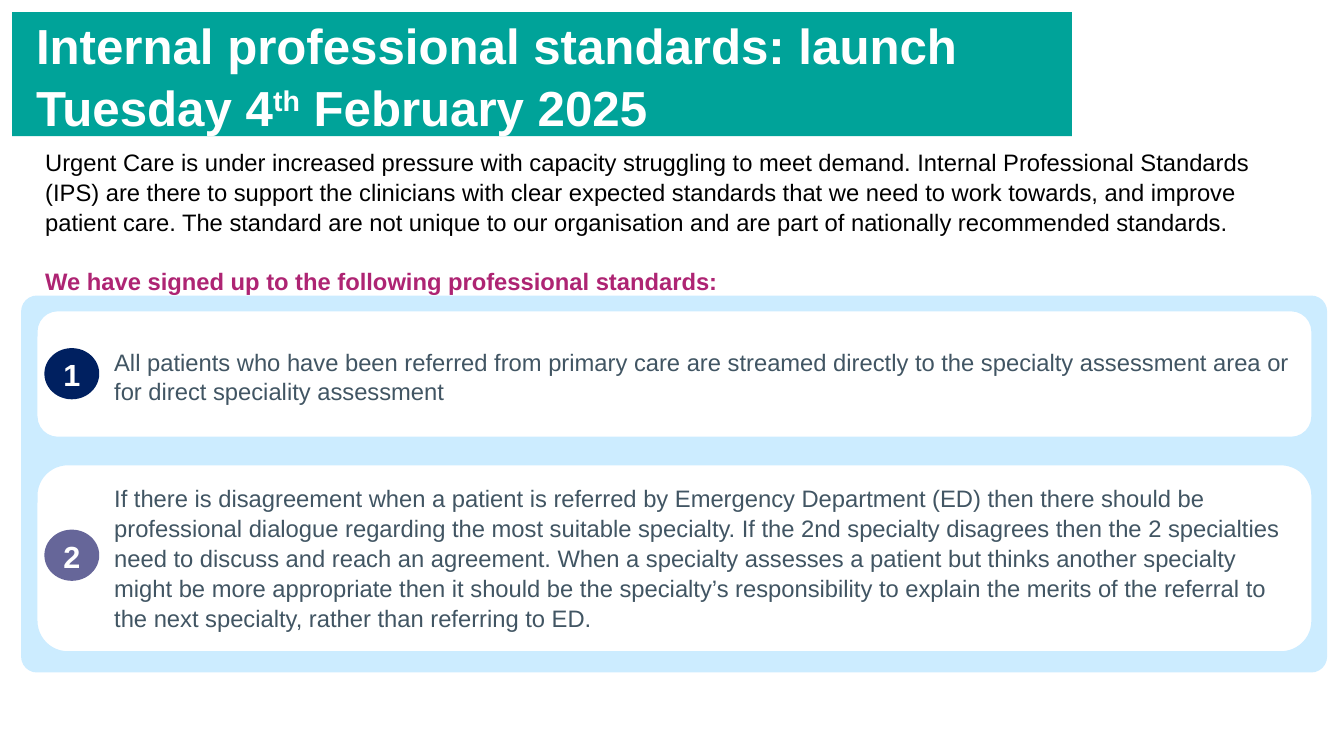
from dataclasses import dataclass

from pptx import Presentation
from pptx import util as u
from pptx.dml.color import RGBColor
from pptx.enum import shapes, text


@dataclass(frozen=True)
class Theme:
    """Colours, type sizes and font of the slide."""
    font: str = "Arial"
    teal: str = "00A399"
    white: str = "FFFFFF"
    black: str = "000000"
    pink: str = "AE2473"
    sky: str = "CCECFF"
    slate: str = "415563"
    navy: str = "002060"
    violet: str = "666699"
    title: int = 58
    badge: int = 36
    body: int = 28
    gap: int = 34
    edge: int = 2
    lines: float = 1.05


THEME = Theme()
KIND = shapes.MSO_SHAPE
PAD = (10, 5, 10, 5)


def px(n):
    """Turn px, one hundred to the inch, into EMU."""
    return u.Emu(n * 9144)


def shape(slide, kind, box, fill, edge=None):
    """Draw a filled preset shape."""
    item = slide.shapes.add_shape(kind, *map(px, box))
    item.shadow.inherit = False
    item.fill.solid()
    item.fill.fore_color.rgb = RGBColor.from_string(fill)
    if edge:
        item.line.color.rgb = RGBColor.from_string(edge)
        item.line.width = u.Pt(THEME.edge)
    else:
        item.line.fill.background()
    return item


def setup(item, pad=PAD, anchor=text.MSO_ANCHOR.TOP):
    """Set wrapping, insets and anchor, and return the text frame."""
    frame = item.text_frame
    frame.word_wrap = True
    frame.vertical_anchor = anchor
    frame.margin_left, frame.margin_top, frame.margin_right, frame.margin_bottom = map(px, pad)
    return frame


def write(para, words, size, color, bold=False, raised=False):
    """Add one run to a paragraph."""
    para.line_spacing = THEME.lines
    run = para.add_run()
    run.text = words
    font = run.font
    font.name, font.size, font.bold = THEME.font, u.Pt(size), bold
    font.color.rgb = RGBColor.from_string(color)
    if raised:
        run._r.get_or_add_rPr().set("baseline", "30000")


def banner(slide):
    """Draw the title band."""
    item = shape(slide, KIND.RECTANGLE, (20, 20, 1734, 203), THEME.teal)
    para = setup(item, (39, 12, 47, 12), text.MSO_ANCHOR.MIDDLE).paragraphs[0]
    para.alignment = text.PP_ALIGN.LEFT
    for words, raised in (
        ("Internal professional standards: launch Tuesday 4", False),
        ("th", True),
        (" February 2025", False),
    ):
        write(para, words, THEME.title, THEME.white, True, raised)


def intro(slide):
    """Write the opening text and the lead-in line."""
    item = slide.shapes.add_textbox(*map(px, (74, 240, 2050, 283)))
    frame = setup(item, (0, 0, 0, 0))
    write(frame.paragraphs[0],
          "Urgent Care is under increased pressure with capacity struggling to meet demand. "
          "Internal Professional Standards (IPS) are there to support the clinicians with clear "
          "expected standards that we need to work towards, and improve patient care. The standard "
          "are not unique to our organisation and are part of nationally recommended standards.",
          THEME.body, THEME.black)
    lead = frame.add_paragraph()
    lead.space_before = u.Pt(THEME.gap)
    write(lead, "We have signed up to the following professional standards:",
          THEME.body, THEME.pink, True)


def card(slide, num, color, top, high, disc, note, words):
    """Draw one numbered standard; note is its text box."""
    shape(slide, KIND.ROUNDED_RECTANGLE, (60, top, 2087, high), THEME.white, THEME.sky)
    badge = shape(slide, KIND.OVAL, (74, disc, 87, 81), color, color)
    para = setup(badge, anchor=text.MSO_ANCHOR.MIDDLE).paragraphs[0]
    para.alignment = text.PP_ALIGN.CENTER
    write(para, str(num), THEME.badge, THEME.white, True)
    item = slide.shapes.add_textbox(*map(px, note))
    write(setup(item).paragraphs[0], words, THEME.body, THEME.slate)


def main():
    """Build and save the slide."""
    deck = Presentation()
    deck.slide_width, deck.slide_height = px(2199), px(1237)
    slide = deck.slides.add_slide(deck.slide_layouts[6])
    banner(slide)
    intro(slide)
    panel = shape(slide, KIND.ROUNDED_RECTANGLE, (36, 485, 2134, 614), THEME.sky, THEME.sky)
    panel.adjustments[0] = 0.04
    card(slide, 1, THEME.navy, 508, 208, 571, (177, 561, 1954, 104),
         "All patients who have been referred from primary care are streamed directly to the "
         "specialty assessment area or for direct speciality assessment")
    card(slide, 2, THEME.violet, 760, 307, 868, (177, 784, 1940, 246),
         "If there is disagreement when a patient is referred by Emergency Department (ED) then "
         "there should be professional dialogue regarding the most suitable specialty. If the 2nd "
         "specialty disagrees then the 2 specialties need to discuss and reach an agreement. When a "
         "specialty assesses a patient but thinks another specialty might be more appropriate then "
         "it should be the specialty’s responsibility to explain the merits of the referral to the "
         "next specialty, rather than referring to ED.")
    deck.save("out.pptx")


if __name__ == "__main__":
    main()
